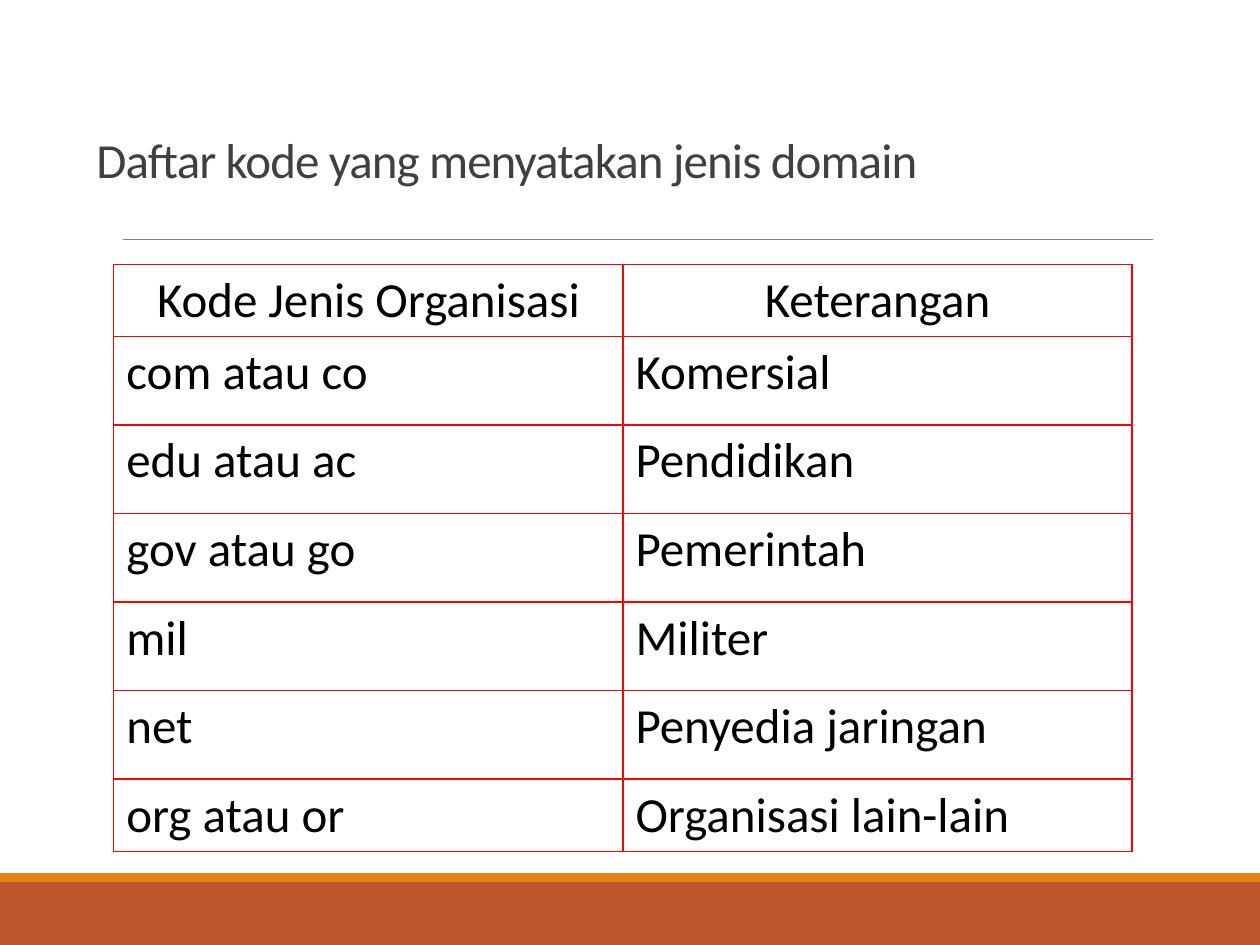
from pptx import Presentation
from pptx.dml.color import RGBColor
from pptx.enum import shapes, text
from pptx.oxml import parse_xml
from pptx.oxml.ns import nsdecls
from pptx.util import Pt

WHITE = RGBColor(0xFF, 0xFF, 0xFF)
BLACK = RGBColor(0x00, 0x00, 0x00)
DARK_GREY = RGBColor(0x40, 0x40, 0x40)
RULE_GREY = RGBColor(0x7F, 0x7F, 0x7F)
RUST = RGBColor(0xBD, 0x58, 0x2C)
ORANGE = RGBColor(0xE4, 0x83, 0x12)
RED = RGBColor(0xFF, 0x00, 0x00)

DOMAIN_ROWS = [
    ("Kode Jenis Organisasi", "Keterangan"),
    ("com atau co", "Komersial"),
    ("edu atau ac", "Pendidikan"),
    ("gov atau go", "Pemerintah"),
    ("mil", "Militer"),
    ("net", "Penyedia jaringan"),
    ("org atau or", "Organisasi lain-lain"),
]


class SlideWriter:
    font = "Calibri"
    size = 28

    def __init__(self, page):
        self.page = page

    def span(self, para, words, color):
        span = para.add_run()
        span.text = words
        span.font.name = self.font
        span.font.size = Pt(self.size)
        span.font.color.rgb = color
        return span

    def band(self, left, top, width, height, color):
        band = self.page.shapes.add_shape(
            shapes.MSO_SHAPE.RECTANGLE, Pt(left), Pt(top), Pt(width), Pt(height))
        band.shadow.inherit = False
        band.fill.solid()
        band.fill.fore_color.rgb = color
        band.line.fill.background()

    def rule(self, left, right, y, color, weight):
        rule = self.page.shapes.add_connector(
            shapes.MSO_CONNECTOR.STRAIGHT, Pt(left), Pt(y), Pt(right), Pt(y))
        rule.line.color.rgb = color
        rule.line.width = Pt(weight)
        rule._element.spPr.append(parse_xml(f"<a:effectLst {nsdecls('a')}/>"))

    def title(self, words, left, top, width, height):
        box = self.page.shapes.add_textbox(Pt(left), Pt(top), Pt(width), Pt(height))
        frame = box.text_frame
        frame.word_wrap = True
        frame.vertical_anchor = text.MSO_ANCHOR.BOTTOM
        para = frame.paragraphs[0]
        para.line_spacing = 0.85
        span = self.span(para, words, DARK_GREY)
        span.font._element.set("spc", "-50")

    def borders(self, cell, color, weight):
        props = cell._tc.get_or_add_tcPr()
        for place, side in enumerate(("lnL", "lnR", "lnT", "lnB")):
            props.insert(place, parse_xml(
                f'<a:{side} {nsdecls("a")} w="{Pt(weight)}"><a:solidFill>'
                f'<a:srgbClr val="{color}"/></a:solidFill></a:{side}>'))

    def table(self, rows, left, top, widths, heights):
        frame = self.page.shapes.add_table(
            len(rows), len(widths), Pt(left), Pt(top),
            Pt(sum(widths)), Pt(sum(heights)))
        table = frame.table
        table.first_row = table.horz_banding = False
        for column, width in zip(table.columns, widths):
            column.width = Pt(width)
        for r, (words_in_row, height) in enumerate(zip(rows, heights)):
            table.rows[r].height = Pt(height)
            for c, words in enumerate(words_in_row):
                cell = table.cell(r, c)
                cell.fill.background()
                self.borders(cell, RED, 1)
                para = cell.text_frame.paragraphs[0]
                para.alignment = text.PP_ALIGN.LEFT if r else text.PP_ALIGN.CENTER
                self.span(para, words, BLACK)


def main():
    deck = Presentation()
    deck.slide_width, deck.slide_height = Pt(720), Pt(540)
    page = deck.slides.add_slide(deck.slide_layouts[6])
    page.background.fill.solid()
    page.background.fill.fore_color.rgb = WHITE
    writer = SlideWriter(page)

    # Footer bands and the rule under the title
    writer.band(0, 504, 720, 36, RUST)
    writer.band(0, 499, 720, 5, ORANGE)
    writer.rule(70.5, 659, 136.8, RULE_GREY, 0.5)

    # Title
    writer.title("Daftar kode yang menyatakan jenis domain", 48, 71.5, 660, 40)

    # Domain codes: shorter first and last rows
    heights = [41.3] + [50.6] * 5 + [41.3]
    writer.table(DOMAIN_ROWS, 65, 151, [291, 291], heights)

    deck.save("out.pptx")


if __name__ == "__main__":
    main()
